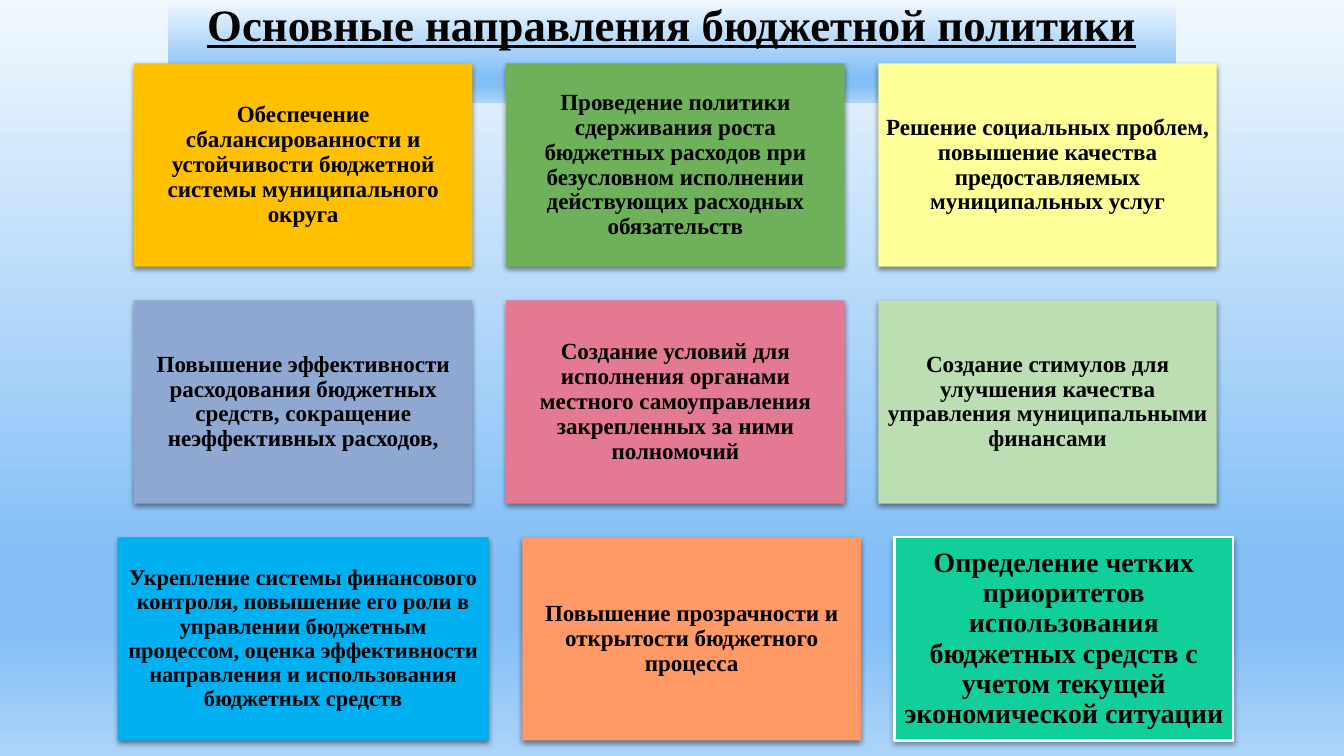
from lxml import etree
from pptx import Presentation
from pptx.dml.color import RGBColor
from pptx.enum.shapes import MSO_SHAPE
from pptx.enum.text import MSO_ANCHOR, MSO_AUTO_SIZE, PP_ALIGN
from pptx.oxml.ns import qn
from pptx.util import Cm, Pt

RECTANGLE = MSO_SHAPE.RECTANGLE
CENTER = PP_ALIGN.CENTER
MIDDLE, BOTTOM = MSO_ANCHOR.MIDDLE, MSO_ANCHOR.BOTTOM
NO_AUTOFIT = MSO_AUTO_SIZE.NONE

BLACK = RGBColor(0x00, 0x00, 0x00)
WHITE = RGBColor(0xFF, 0xFF, 0xFF)
AMBER = RGBColor(0xFF, 0xC0, 0x00)
GREEN = RGBColor(0x6E, 0xB1, 0x5A)
YELLOW = RGBColor(0xFF, 0xFF, 0x99)
GREY_BLUE = RGBColor(0x8F, 0xA8, 0xD1)
PINK = RGBColor(0xE3, 0x79, 0x92)
PALE_GREEN = RGBColor(0xBB, 0xDE, 0xB3)
SKY_BLUE = RGBColor(0x00, 0xB0, 0xF0)
ORANGE = RGBColor(0xFF, 0x99, 0x66)
TEAL = RGBColor(0x10, 0xCF, 0x9B)
ICE = RGBColor(0xF1, 0xF8, 0xFE)
BLUE = RGBColor(0x83, 0xBF, 0xF6)
LIGHT_BLUE = RGBColor(0xAC, 0xD4, 0xF9)
SKY_GRADIENT = [(0, ICE), (74, BLUE), (83, BLUE), (100, LIGHT_BLUE)]

FONT = "Times New Roman"
TITLE = "Основные направления бюджетной политики"

# Each card: text, fill, font size, width in cm, outline colour, shadow opacity
CARD_WIDTH = 8.53
ROWS = [
    [
        ("Обеспечение сбалансированности и устойчивости бюджетной системы "
         "муниципального округа", AMBER, 16.5, CARD_WIDTH, None, 45),
        ("Проведение политики сдерживания роста бюджетных расходов при "
         "безусловном исполнении действующих расходных обязательств",
         GREEN, 16.5, CARD_WIDTH, None, 45),
        ("Решение социальных проблем, повышение качества предоставляемых "
         "муниципальных услуг", YELLOW, 16.5, CARD_WIDTH, None, 45),
    ],
    [
        ("Повышение эффективности расходования бюджетных средств, сокращение "
         "неэффективных расходов,", GREY_BLUE, 16.5, CARD_WIDTH, None, 45),
        ("Создание условий для исполнения органами местного самоуправления "
         "закрепленных за ними полномочий", PINK, 16.5, CARD_WIDTH, None, 45),
        ("Создание стимулов для улучшения качества управления муниципальными "
         "финансами", PALE_GREEN, 16.5, CARD_WIDTH, None, 45),
    ],
    [
        ("Укрепление системы финансового контроля, повышение его роли в "
         "управлении бюджетным процессом, оценка эффективности направления и "
         "использования бюджетных средств", SKY_BLUE, 16, 9.35, None, 45),
        ("Повышение прозрачности и открытости бюджетного процесса",
         ORANGE, 16.5, CARD_WIDTH, None, 45),
        ("Определение четких приоритетов использования бюджетных средств с "
         "учетом текущей экономической ситуации",
         TEAL, 20, CARD_WIDTH, WHITE, 35),
    ],
]

CARD_HEIGHT = 5.12
GAP = 0.85
GRID_TOP = 1.6
GRID_CENTER = 17.02


def fill_with_sky(fill, element):
    """Give the fill a vertical gradient; element is the XML that holds it."""
    fill.gradient()
    fill.gradient_angle = 270
    stops = next(element.iter(qn("a:gsLst")))
    for stop in list(stops):
        stops.remove(stop)
    for position, color in SKY_GRADIENT:
        stop = etree.SubElement(stops, qn("a:gs"), pos=str(position * 1000))
        etree.SubElement(stop, qn("a:srgbClr"), val=str(color))


def add_shadow(shape, opacity):
    shape.shadow.inherit = False
    effects = next(shape.element.iter(qn("a:effectLst")))
    shadow = etree.SubElement(
        effects, qn("a:outerShdw"), blurRad=str(Pt(4)), dist=str(Pt(2)),
        dir="5400000", algn="ctr", rotWithShape="0")
    color = etree.SubElement(shadow, qn("a:srgbClr"), val=str(BLACK))
    etree.SubElement(color, qn("a:alpha"), val=str(opacity * 1000))


def write_text(frame, text, size, anchor, underline=None):
    frame.word_wrap = True
    frame.auto_size = NO_AUTOFIT
    frame.vertical_anchor = anchor
    paragraph = frame.paragraphs[0]
    paragraph.alignment = CENTER
    paragraph.line_spacing = 0.9
    paragraph.space_before = Pt(0)
    run = paragraph.add_run()
    run.text = text
    run.font.name = FONT
    run.font.size = Pt(size)
    run.font.bold = True
    run.font.underline = underline
    run.font.color.rgb = BLACK


def add_title(slide):
    title = slide.shapes.title
    title.left, title.top = Cm(4.23), Cm(0)
    title.width, title.height = Cm(25.4), Cm(2.59)
    fill_with_sky(title.fill, title.element)
    title.text_frame.margin_bottom = Cm(1.3)
    write_text(title.text_frame, TITLE, 32, BOTTOM, underline=True)


def add_card(slide, left, top, card):
    text, color, size, width, outline, opacity = card
    shape = slide.shapes.add_shape(
        RECTANGLE, Cm(left), Cm(top), Cm(width), Cm(CARD_HEIGHT))
    shape.fill.solid()
    shape.fill.fore_color.rgb = color
    if outline is None:
        shape.line.fill.background()
    else:
        shape.line.color.rgb = outline
        shape.line.width = Pt(1.57)
    add_shadow(shape, opacity)
    frame = shape.text_frame
    margin = Cm(0.18 if size < 20 else 0.2)
    frame.margin_left = frame.margin_right = margin
    frame.margin_top = frame.margin_bottom = margin
    write_text(frame, text, size, MIDDLE)


def main():
    presentation = Presentation()
    presentation.slide_width = Cm(33.87)
    presentation.slide_height = Cm(19.05)
    slide = presentation.slides.add_slide(presentation.slide_layouts[5])
    fill_with_sky(slide.background.fill, slide.element)
    add_title(slide)
    for row_index, row in enumerate(ROWS):
        row_width = sum(card[3] for card in row) + GAP * (len(row) - 1)
        left = GRID_CENTER - row_width / 2
        top = GRID_TOP + row_index * (CARD_HEIGHT + GAP)
        for card in row:
            add_card(slide, left, top, card)
            left += card[3] + GAP
    presentation.save("out.pptx")


if __name__ == "__main__":
    main()
